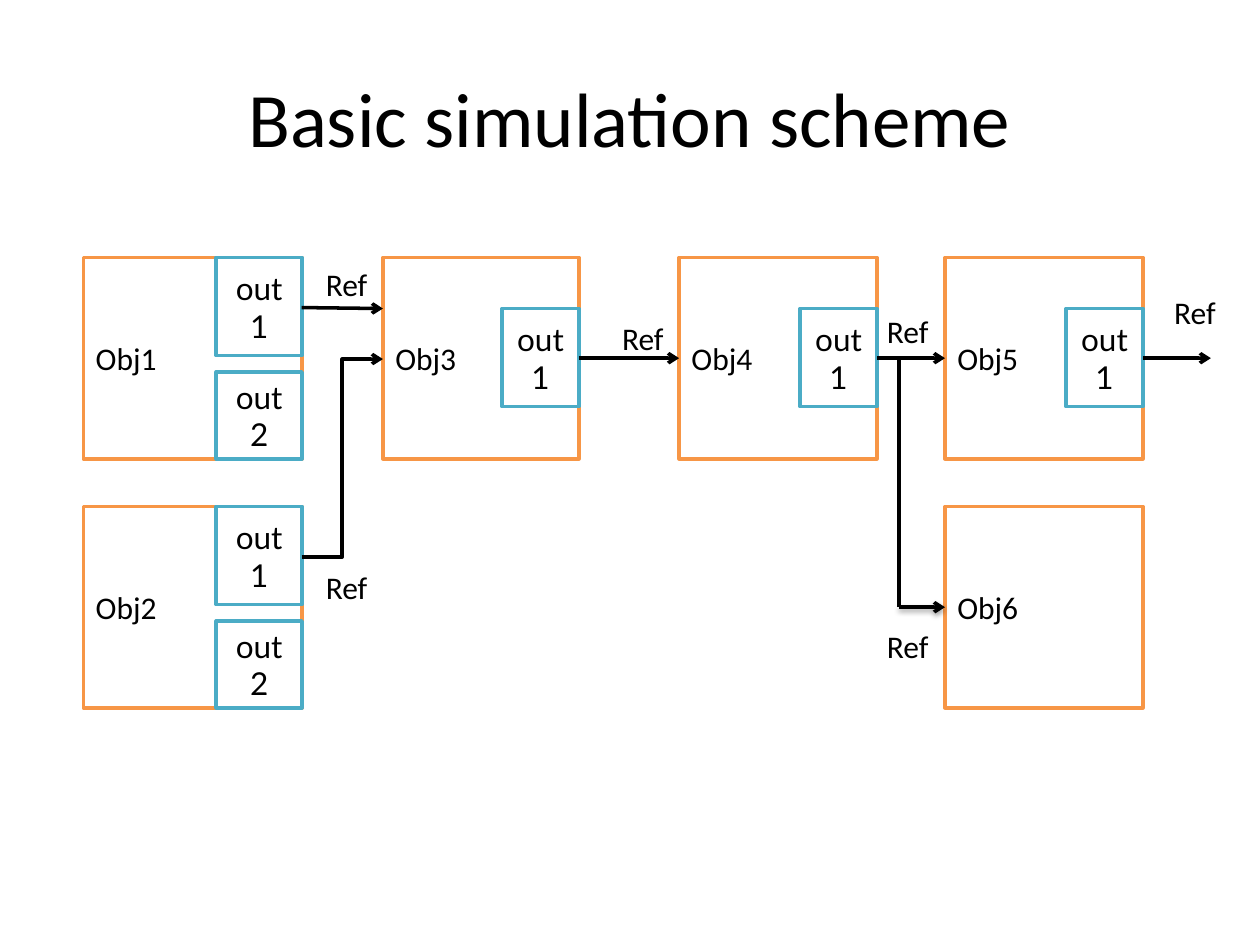
from lxml.etree import SubElement
from pptx import Presentation
from pptx.dml.color import RGBColor
from pptx.enum.shapes import MSO_CONNECTOR, MSO_SHAPE
from pptx.enum.text import MSO_ANCHOR, PP_ALIGN
from pptx.oxml.ns import qn
from pptx.util import Cm, Pt

ORANGE, TEAL, BLACK, WHITE = "F79646", "4BACC6", "000000", "FFFFFF"
ROW1, ROW2 = 5.19, 10.21
BOX_H = 4.06
PORT_H = 1.98


def color(value):
    return RGBColor.from_string(value)


def write(tf, text, size=18, font="Calibri", align=PP_ALIGN.LEFT,
          anchor=MSO_ANCHOR.MIDDLE, wrap=True):
    tf.word_wrap = wrap
    tf.vertical_anchor = anchor
    p = tf.paragraphs[0]
    p.alignment = align
    r = p.add_run()
    r.text = text
    r.font.size = Pt(size)
    r.font.name = font
    r.font.color.rgb = color(BLACK)


def add_box(shapes, x, y, w, h, text, line, **fmt):
    sp = shapes.add_shape(MSO_SHAPE.RECTANGLE, Cm(x), Cm(y), Cm(w), Cm(h))
    sp.shadow.inherit = False
    sp.fill.solid()
    sp.fill.fore_color.rgb = color(WHITE)
    sp.line.color.rgb = color(line)
    sp.line.width = Pt(2)
    write(sp.text_frame, text, **fmt)


def add_object(s, x, y, w, name, ports=(), port_w=1.55):
    """Object box with output ports, (text, top offset, height), on its right edge."""
    shapes = s.shapes.add_group_shape().shapes if ports else s.shapes
    add_box(shapes, x, y, w, BOX_H, name, ORANGE)
    for text, dy, h in ports:
        add_box(shapes, x + w - port_w, y + dy, port_w, h, text, TEAL,
                font="Lato", align=PP_ALIGN.CENTER)


def add_link(s, x1, y1, x2, y2, kind=MSO_CONNECTOR.STRAIGHT, arrow=True, shadow=False):
    cxn = s.shapes.add_connector(kind, Cm(x1), Cm(y1), Cm(x2), Cm(y2))
    cxn.line.color.rgb = color(BLACK)
    cxn.line.width = Pt(2)
    if arrow:
        SubElement(cxn.line._get_or_add_ln(), qn("a:tailEnd"), type="arrow")
    effects = SubElement(cxn._element.spPr, qn("a:effectLst"))
    if shadow:
        outer = SubElement(effects, qn("a:outerShdw"), blurRad="40000",
                           dist="20000", dir="5400000", rotWithShape="0")
        clr = SubElement(outer, qn("a:srgbClr"), val=BLACK)
        SubElement(clr, qn("a:alpha"), val="38000")
    return cxn


def add_ref(s, x, y):
    tb = s.shapes.add_textbox(Cm(x), Cm(y), Cm(1.4), Cm(1.02))
    write(tb.text_frame, "Ref", anchor=MSO_ANCHOR.TOP, wrap=False)


def add_title(s, text):
    title = s.shapes.title
    title.left, title.top, title.width, title.height = Cm(1.27), Cm(0.76), Cm(22.86), Cm(3.18)
    write(title.text_frame, text, size=44, align=PP_ALIGN.CENTER)


def add_scheme(s):
    two_ports = [("out1", 0, PORT_H), ("out2", 2.31, 1.75)]
    one_port = [("out1", 1.03, PORT_H)]
    for name, y in (("Obj1", ROW1), ("Obj2", ROW2)):
        add_object(s, 1.68, y, 4.41, name, two_ports, port_w=1.73)
    for name, x, w in (("Obj3", 7.72, 3.95), ("Obj4", 13.69, 3.99), ("Obj5", 19.05, 3.99)):
        add_object(s, x, ROW1, w, name, one_port)
    add_object(s, 19.05, ROW2, 3.99, "Obj6")

    mid = ROW1 + BOX_H / 2
    add_link(s, 6.08, 6.2, 7.72, 6.22)
    add_link(s, 6.08, 11.23, 7.72, 7.24, MSO_CONNECTOR.ELBOW)
    for x1, x2 in ((11.67, 13.69), (17.69, 19.05), (23.04, 24.41)):
        add_link(s, x1, mid, x2, mid)

    branch_x, branch_y = 18.12, ROW2 + BOX_H / 2
    branch = add_link(s, 17.69, mid, branch_x, branch_y, MSO_CONNECTOR.ELBOW, arrow=False)
    branch._element.spPr.find(qn("a:prstGeom")).set("prst", "bentConnector2")
    add_link(s, branch_x, branch_y, 19.05, branch_y, shadow=True)

    for x, y in ((6.32, 5.21), (6.32, 11.33), (12.29, 6.3),
                 (17.63, 6.17), (17.63, 12.52), (23.42, 5.79)):
        add_ref(s, x, y)


def main():
    prs = Presentation()
    prs.slide_width, prs.slide_height = Cm(25.4), Cm(19.05)
    s = prs.slides.add_slide(prs.slide_layouts[5])
    add_title(s, "Basic simulation scheme")
    add_scheme(s)
    prs.save("out.pptx")


if __name__ == "__main__":
    main()
